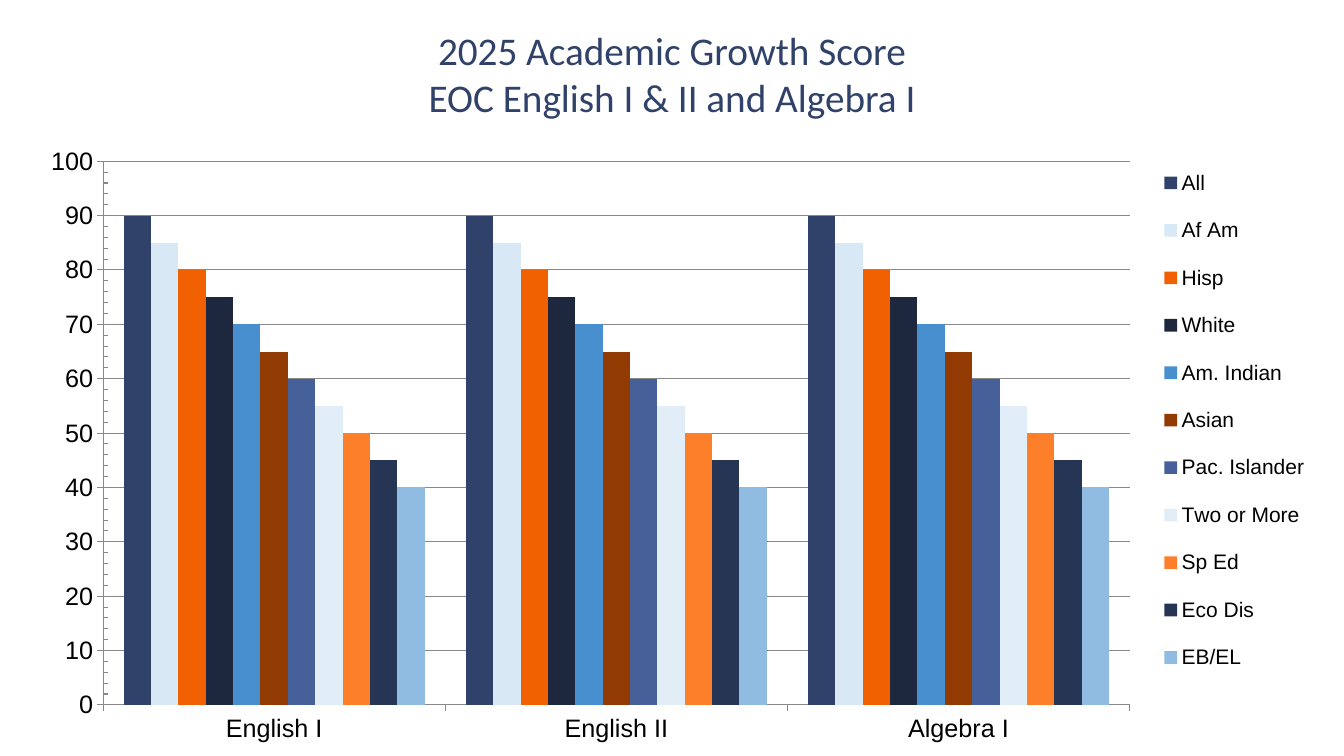
import lxml.etree
import pptx
import pptx.chart.data
import pptx.dml.color
import pptx.enum.chart
import pptx.enum.text
import pptx.oxml.ns
import pptx.util

SLIDE_W, SLIDE_H = pptx.util.Inches(13.33), pptx.util.Inches(7.5)
GRAY = "888888"
SUBJECTS = ["English I", "English II", "Algebra I"]
GROUPS = [
    ("All", "304269"), ("Af Am", "D9E8F5"), ("Hisp", "F26101"),
    ("White", "1D283F"), ("Am. Indian", "478FCF"), ("Asian", "913A01"),
    ("Pac. Islander", "46619A"), ("Two or More", "E1EDF7"),
    ("Sp Ed", "FE7F2A"), ("Eco Dis", "263554"), ("EB/EL", "90BCE2"),
]
TOP_SCORE, SCORE_STEP = 90, 5


def rgb(color):
    return pptx.dml.color.RGBColor.from_string(color)


def style_font(font, size, color, name):
    font.size, font.name = pptx.util.Pt(size), name
    font.color.rgb = rgb(color)


def style_line(line):
    line.color.rgb = rgb(GRAY)
    line.width = pptx.util.Pt(0.75)


def share_box(x, y, w, h):
    """Turn shares of the slide's size into left, top, width and height."""
    return [round(v) for v in (x * SLIDE_W, y * SLIDE_H, w * SLIDE_W, h * SLIDE_H)]


def place_part(parent, index, box, inner=False):
    """Fix a chart part at a box given in shares of the chart's size."""
    qn = pptx.oxml.ns.qn
    for old in parent.findall(qn("c:layout")):
        parent.remove(old)
    layout = lxml.etree.Element(qn("c:layout"))
    manual = lxml.etree.SubElement(layout, qn("c:manualLayout"))
    settings = [("layoutTarget", "inner")] if inner else []
    settings += [("xMode", "edge"), ("yMode", "edge")]
    settings += zip("xywh", box)
    for tag, value in settings:
        lxml.etree.SubElement(manual, qn(f"c:{tag}")).set("val", str(value))
    parent.insert(index, layout)


def add_title(s, text, box):
    sp = s.shapes.title
    sp.left, sp.top, sp.width, sp.height = box
    tf = sp.text_frame
    tf.text = text
    tf.word_wrap = True
    tf.auto_size = pptx.enum.text.MSO_AUTO_SIZE.NONE
    tf.vertical_anchor = pptx.enum.text.MSO_ANCHOR.MIDDLE
    for p in tf.paragraphs:
        p.alignment = pptx.enum.text.PP_ALIGN.CENTER
        for r in p.runs:
            style_font(r.font, 28, "304269", "Calibri")


def style_axis(axis):
    style_font(axis.tick_labels.font, 18, "000000", "Arial")
    style_line(axis.format.line)
    axis.major_tick_mark = pptx.enum.chart.XL_TICK_MARK.OUTSIDE


def style_score_axis(axis):
    style_axis(axis)
    axis.minimum_scale, axis.maximum_scale = 0, 100
    axis.major_unit, axis.minor_unit = 10, 2
    axis.minor_tick_mark = pptx.enum.chart.XL_TICK_MARK.INSIDE
    axis.has_major_gridlines = True
    style_line(axis.major_gridlines.format.line)


def add_legend(chart):
    chart.has_legend = True
    legend = chart.legend
    legend.position = pptx.enum.chart.XL_LEGEND_POSITION.RIGHT
    legend.include_in_layout = False
    style_font(legend.font, 15, "000000", "Arial")
    place_part(legend._element, 1, (0.87, 0.02, 0.13, 0.88))


def add_score_chart(s, box):
    data = pptx.chart.data.CategoryChartData()
    data.categories = SUBJECTS
    for i, (group, _) in enumerate(GROUPS):
        data.add_series(group, [TOP_SCORE - SCORE_STEP * i] * len(SUBJECTS))
    kind = pptx.enum.chart.XL_CHART_TYPE.COLUMN_CLUSTERED
    chart = s.shapes.add_chart(kind, *box, data).chart
    chart.has_title = False
    style_font(chart.font, 18, "000000", "Arial")

    plot = chart.plots[0]
    plot.gap_width, plot.overlap = 150, 0
    plot.vary_by_categories = False
    for series, (_, color) in zip(plot.series, GROUPS):
        series.format.fill.solid()
        series.format.fill.fore_color.rgb = rgb(color)

    style_axis(chart.category_axis)
    style_score_axis(chart.value_axis)
    add_legend(chart)
    place_part(chart._chartSpace.chart.plotArea, 0, (0.06, 0.043, 0.794, 0.875), inner=True)


def main():
    prs = pptx.Presentation()
    prs.slide_width, prs.slide_height = SLIDE_W, SLIDE_H
    s = prs.slides.add_slide(prs.slide_layouts.get_by_name("Title Only"))
    add_title(s, "2025 Academic Growth Score\nEOC English I & II and Algebra I",
              share_box(0.125, 0.03, 0.75, 0.133))
    add_score_chart(s, share_box(0.019, 0.178, 0.962, 0.822))
    prs.save("out.pptx")


if __name__ == "__main__":
    main()
